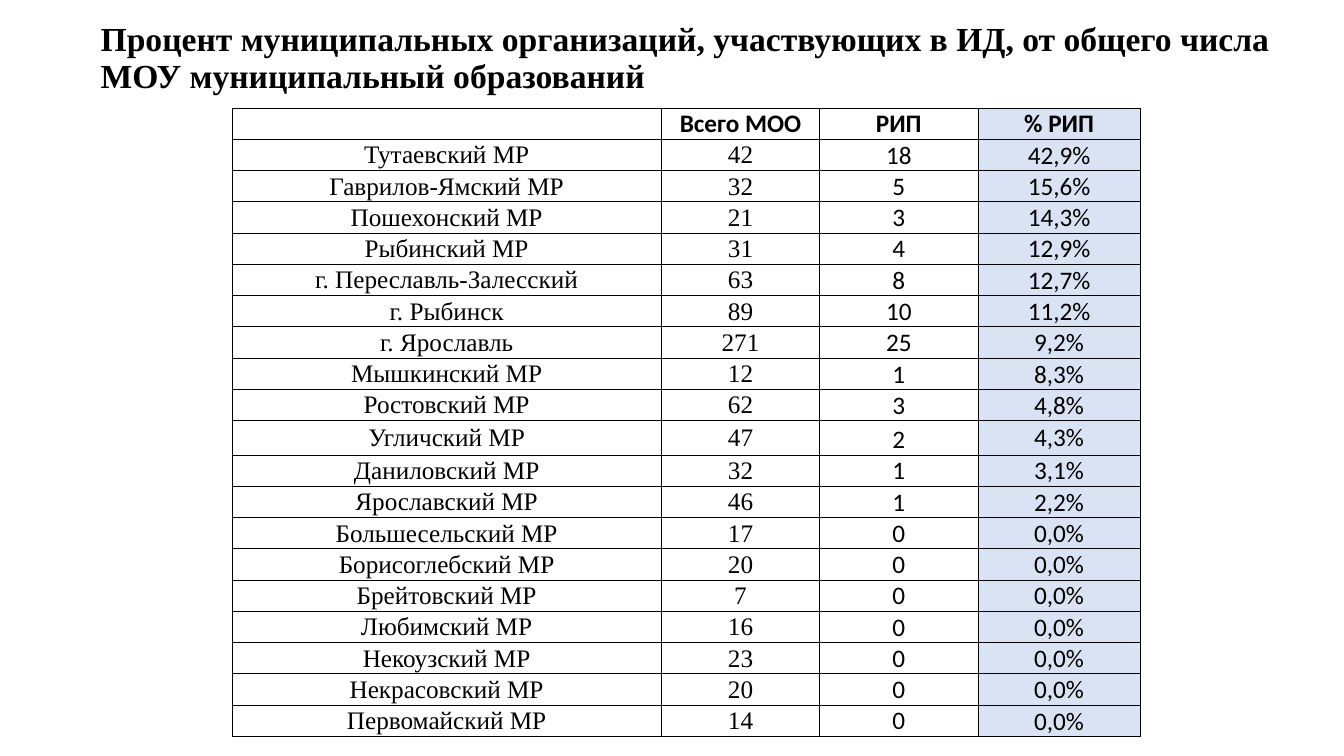
from pptx import Presentation
from pptx.dml.color import RGBColor
from pptx.enum.text import MSO_ANCHOR, PP_ALIGN
from pptx.oxml import parse_xml
from pptx.oxml.ns import nsdecls
from pptx.util import Inches, Pt

SERIF, SANS = "Times New Roman", "Calibri"
BLACK, TINT = "000000", "DAE3F3"
TITLE = ("Процент муниципальных организаций, участвующих в ИД, "
         "от общего числа МОУ муниципальный образований")
HEAD = ("", "Всего МОО", "РИП", "% РИП")
DATA = [
    ("Тутаевский МР", 42, 18, "42,9%"),
    ("Гаврилов-Ямский МР", 32, 5, "15,6%"),
    ("Пошехонский МР", 21, 3, "14,3%"),
    ("Рыбинский МР", 31, 4, "12,9%"),
    ("г. Переславль-Залесский", 63, 8, "12,7%"),
    ("г. Рыбинск", 89, 10, "11,2%"),
    ("г. Ярославль", 271, 25, "9,2%"),
    ("Мышкинский МР", 12, 1, "8,3%"),
    ("Ростовский МР", 62, 3, "4,8%"),
    ("Угличский МР", 47, 2, "4,3%"),
    ("Даниловский МР", 32, 1, "3,1%"),
    ("Ярославский МР", 46, 1, "2,2%"),
    ("Большесельский МР", 17, 0, "0,0%"),
    ("Борисоглебский МР", 20, 0, "0,0%"),
    ("Брейтовский МР", 7, 0, "0,0%"),
    ("Любимский МР", 16, 0, "0,0%"),
    ("Некоузский МР", 23, 0, "0,0%"),
    ("Некрасовский МР", 20, 0, "0,0%"),
    ("Первомайский МР", 14, 0, "0,0%"),
]
COLS = (4.26, 1.57, 1.57, 1.61)
ROW, TALL = 0.31, 0.34
TALL_ROW = 10  # the Угличский row


def color(code):
    return RGBColor.from_string(code)


def write(frame, text, font=SERIF, size=18, bold=False,
          align=PP_ALIGN.CENTER, space=None):
    line = frame.paragraphs[0]
    line.alignment = align
    line.line_spacing = space
    if text:
        run = line.add_run()
        run.text = text
        run.font.name, run.font.size, run.font.bold = font, Pt(size), bold
        run.font.color.rgb = color(BLACK)


def border(cell):
    props = cell._tc.get_or_add_tcPr()
    for spot, side in enumerate(("lnL", "lnR", "lnT", "lnB")):
        props.insert(spot, parse_xml(
            f'<a:{side} {nsdecls("a")} w="{Pt(0.5)}"><a:solidFill>'
            f'<a:srgbClr val="{BLACK}"/></a:solidFill></a:{side}>'))


def add_title(slide):
    box = slide.shapes.add_textbox(
        Inches(0.9), Inches(0.09), Inches(11.81), Inches(0.99))
    frame = box.text_frame
    frame.word_wrap = True
    frame.vertical_anchor = MSO_ANCHOR.MIDDLE
    write(frame, TITLE, size=24, bold=True, align=PP_ALIGN.LEFT, space=0.9)


def style(cell, text, row, col):
    cell.margin_left = cell.margin_right = cell.margin_top = Inches(0.01)
    cell.margin_bottom = 0
    low = row == 0 or col == 2
    cell.vertical_anchor = MSO_ANCHOR.BOTTOM if low else MSO_ANCHOR.MIDDLE
    # Tint only the share column
    if col == 3:
        cell.fill.solid()
        cell.fill.fore_color.rgb = color(TINT)
    else:
        cell.fill.background()
    border(cell)
    font = SANS if row == 0 or col > 1 else SERIF
    write(cell.text_frame, text, font=font, bold=row == 0)


def add_grid(slide):
    rows = [HEAD, *DATA]
    shape = slide.shapes.add_table(
        len(rows), len(COLS), Inches(2.3), Inches(1.07),
        Inches(sum(COLS)), Inches(ROW * len(rows)))
    table = shape.table
    table.first_row = table.horz_banding = False
    for col, width in enumerate(COLS):
        table.columns[col].width = Inches(width)
    for row, items in enumerate(rows):
        table.rows[row].height = Inches(TALL if row == TALL_ROW else ROW)
        for col, item in enumerate(items):
            style(table.cell(row, col), str(item), row, col)


def main():
    deck = Presentation()
    deck.slide_width, deck.slide_height = Inches(13.33), Inches(7.5)
    slide = deck.slides.add_slide(deck.slide_layouts[6])
    add_title(slide)
    add_grid(slide)
    deck.save("out.pptx")


if __name__ == "__main__":
    main()
